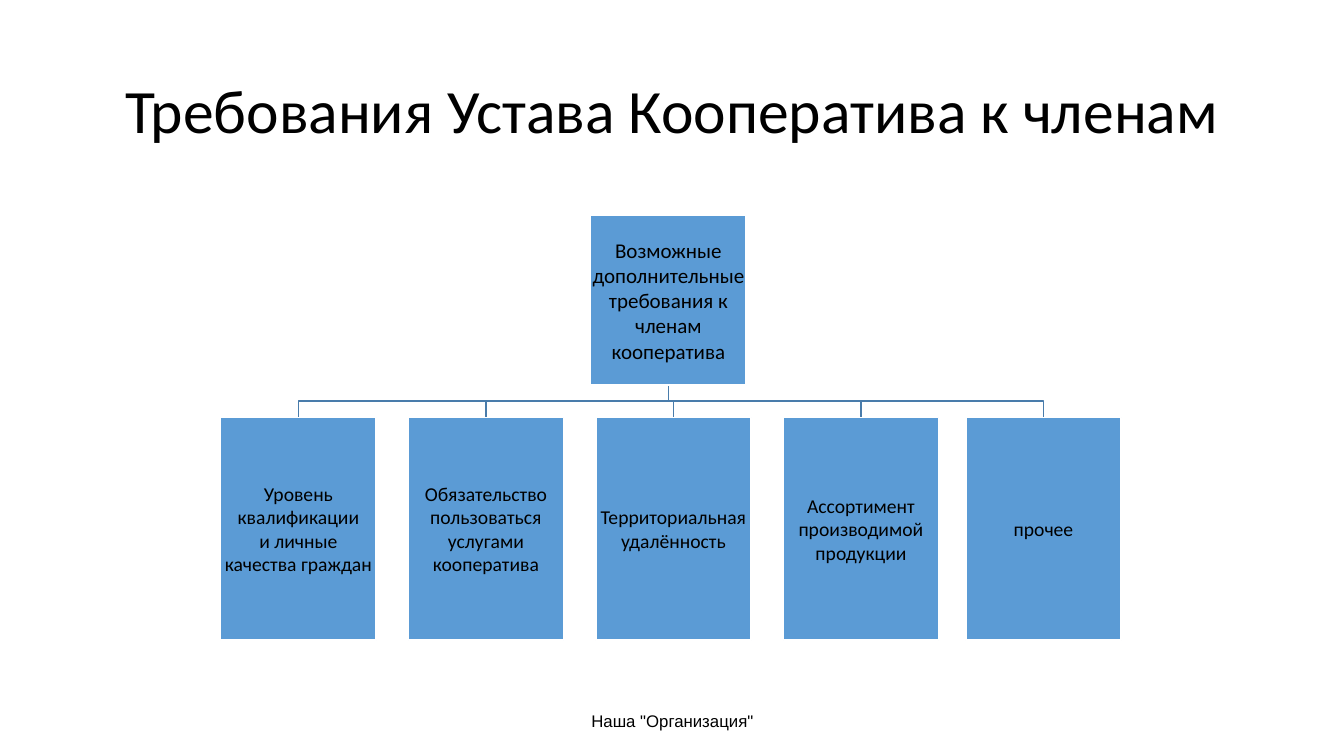
from dataclasses import dataclass

from pptx import Presentation
from pptx.dml.color import RGBColor
from pptx.enum.shapes import MSO_SHAPE as Shape
from pptx.enum.text import MSO_ANCHOR as Anchor, PP_ALIGN as Align
from pptx.util import Inches, Pt


@dataclass(frozen=True)
class Theme:
    text: RGBColor = RGBColor.from_string("000000")
    box: RGBColor = RGBColor.from_string("5B9BD5")
    border: RGBColor = RGBColor.from_string("FFFFFF")
    branch: RGBColor = RGBColor.from_string("497CAB")
    font: str = "Calibri"
    footer_font: str = "Arial"
    title_size: int = 44
    root_size: int = 15
    child_size: int = 14
    footer_size: int = 12
    line_width: int = 1


def write_text(frame, lines, *, font, size, color, inset=(0.1, 0.05), spacing=1.0):
    frame.word_wrap = True
    frame.vertical_anchor = Anchor.MIDDLE
    frame.margin_left = frame.margin_right = Inches(inset[0])
    frame.margin_top = frame.margin_bottom = Inches(inset[1])
    for index, line in enumerate(lines):
        paragraph = frame.add_paragraph() if index else frame.paragraphs[0]
        paragraph.alignment = Align.CENTER
        paragraph.line_spacing = spacing
        run = paragraph.add_run()
        run.text = line
        run.font.name = font
        run.font.size = Pt(size)
        run.font.color.rgb = color


class SlideBuilder:
    def __init__(self, slide, theme):
        self.slide = slide
        self.theme = theme

    def label(self, text, left, top, width, height, **style):
        shape = self.slide.shapes.add_textbox(
            Inches(left), Inches(top), Inches(width), Inches(height))
        write_text(shape.text_frame, [text], color=self.theme.text, **style)

    def box(self, lines, left, top, width, height, size):
        shape = self.slide.shapes.add_shape(
            Shape.RECTANGLE, Inches(left), Inches(top), Inches(width), Inches(height))
        shape.shadow.inherit = False
        shape.fill.solid()
        shape.fill.fore_color.rgb = self.theme.box
        shape.line.color.rgb = self.theme.border
        shape.line.width = Pt(self.theme.line_width)
        write_text(shape.text_frame, lines, font=self.theme.font, size=size,
                   color=self.theme.text, inset=(0.01, 0.01))

    def branch(self, start_x, start_y, end_x, end_y):
        middle_y = (start_y + end_y) / 2
        points = [(start_x, middle_y), (end_x, middle_y), (end_x, end_y)]
        builder = self.slide.shapes.build_freeform(Inches(start_x), Inches(start_y))
        builder.add_line_segments(
            [(Inches(x), Inches(y)) for x, y in points], close=False)
        shape = builder.convert_to_shape()
        shape.shadow.inherit = False
        shape.fill.background()
        shape.line.color.rgb = self.theme.branch
        shape.line.width = Pt(self.theme.line_width)


BOX_WIDTH = 1.54
ROOT_LEFT, ROOT_TOP, ROOT_HEIGHT = 5.86, 2.14, 1.68
CHILD_TOP, CHILD_HEIGHT = 4.14, 2.21
ROOT_LINES = ["Возможные", "дополнительные", "требования к", "членам кооператива"]
REQUIREMENTS = [
    (2.19, ["Уровень", "квалификации", "и личные", "качества граждан"]),
    (4.05, ["Обязательство", "пользоваться", "услугами", "кооператива"]),
    (5.91, ["Территориальная", "удалённость"]),
    (7.77, ["Ассортимент", "производимой", "продукции"]),
    (9.58, ["прочее"]),
]


def main():
    presentation = Presentation()
    presentation.slide_width = Inches(13.33)
    presentation.slide_height = Inches(7.5)
    theme = Theme()
    slide = presentation.slides.add_slide(presentation.slide_layouts[6])
    builder = SlideBuilder(slide, theme)

    builder.label('Наша "Организация"', 4.42, 6.95, 4.5, 0.4,
                  font=theme.footer_font, size=theme.footer_size)
    builder.label("Требования Устава Кооператива к членам", 0.92, 0.4, 11.5, 1.45,
                  font=theme.font, size=theme.title_size, spacing=0.9)

    half = BOX_WIDTH / 2
    for left, _ in reversed(REQUIREMENTS):
        builder.branch(ROOT_LEFT + half, ROOT_TOP + ROOT_HEIGHT, left + half, CHILD_TOP)
    builder.box(ROOT_LINES, ROOT_LEFT, ROOT_TOP, BOX_WIDTH, ROOT_HEIGHT, theme.root_size)
    for left, lines in REQUIREMENTS:
        builder.box(lines, left, CHILD_TOP, BOX_WIDTH, CHILD_HEIGHT, theme.child_size)

    presentation.save("out.pptx")


if __name__ == "__main__":
    main()
